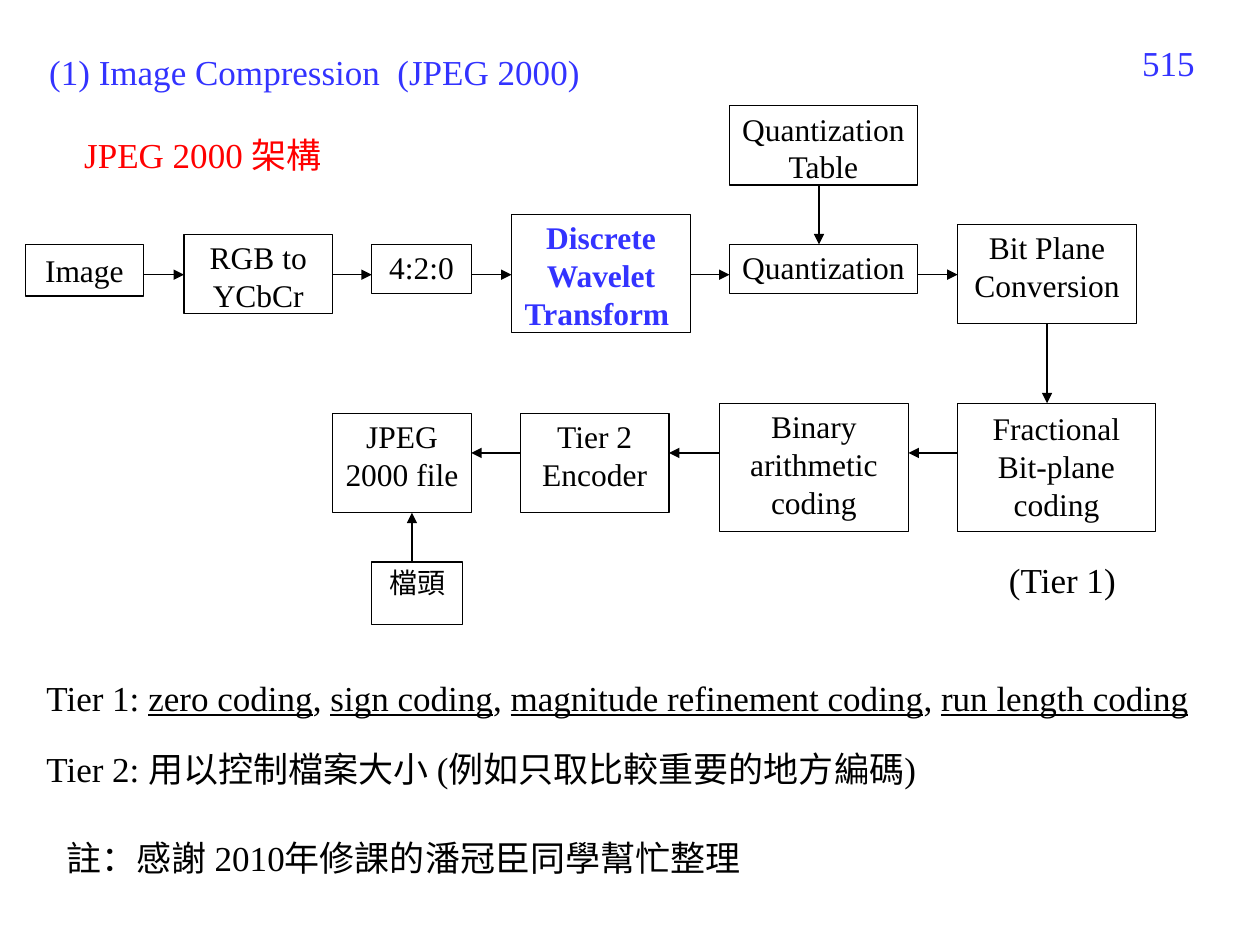
from dataclasses import dataclass

from lxml import etree
from pptx import Presentation
from pptx.dml.color import RGBColor
from pptx.enum.shapes import MSO_CONNECTOR, MSO_SHAPE
from pptx.enum.text import MSO_ANCHOR, MSO_AUTO_SIZE, PP_ALIGN
from pptx.oxml.ns import qn
from pptx.util import Inches, Pt

RECTANGLE = MSO_SHAPE.RECTANGLE
STRAIGHT = MSO_CONNECTOR.STRAIGHT
TOP = MSO_ANCHOR.TOP
NO_AUTOFIT = MSO_AUTO_SIZE.NONE
LEFT, CENTER, RIGHT = PP_ALIGN.LEFT, PP_ALIGN.CENTER, PP_ALIGN.RIGHT

# The slide is a grid of 100 columns and 75 rows
COLUMNS, ROWS = 100, 75
CELL = Inches(0.1)


@dataclass(frozen=True)
class Theme:
    font: str = "Times New Roman"
    ink: RGBColor = RGBColor(0x00, 0x00, 0x00)
    paper: RGBColor = RGBColor(0xFF, 0xFF, 0xFF)
    accent: RGBColor = RGBColor(0x33, 0x33, 0xFF)
    heading: RGBColor = RGBColor(0xFF, 0x00, 0x00)
    body_size: int = 20
    box_size: int = 18
    small_size: int = 16
    line_width: float = 0.75


THEME = Theme()

# Block: text, then left, top, width and height in grid cells
BLOCKS = {
    "image": ("Image", 2, 19.4, 9.4, 4.1),
    "colour": ("RGB to YCbCr", 14.6, 18.6, 11.8, 6.3),
    "sampling": ("4:2:0", 29.5, 19.4, 7.9, 3.9),
    "wavelet": ("Discrete Wavelet Transform ", 40.6, 17, 14.2, 9.4),
    "quantization": ("Quantization", 57.9, 19.4, 14.9, 3.9),
    "bit plane": ("Bit Plane Conversion", 76, 17.8, 14.2, 7.9),
    "fractional": ("Fractional\nBit-plane coding", 76, 32, 15.7, 10.2),
    "binary": ("Binary arithmetic coding", 57.1, 32, 15, 10.2),
    "tier 2": ("Tier 2 Encoder", 41.3, 32.8, 11.8, 7.9),
    "file": ("JPEG 2000 file", 26.4, 32.8, 11, 7.9),
    "table": ("Quantization Table", 57.9, 8.4, 14.9, 6.3),
    "header": ("檔頭", 29.5, 44.6, 7.2, 5),
}
STYLES = {
    "image": {"margins": (0.6, 0.5)},
    "wavelet": {"color": THEME.accent, "bold": True},
    "fractional": {"margins": (1, 0.5)},
    "header": {"size": THEME.small_size},
}

FORWARD = ["image", "colour", "sampling", "wavelet", "quantization", "bit plane"]
BACKWARD = ["fractional", "binary", "tier 2", "file"]
FORWARD_ROW, BACKWARD_ROW = 21.8, 35.95
# Vertical arrow: start block, end block, column
VERTICALS = [
    ("table", "quantization", 65),
    ("bit plane", "fractional", 83.1),
    ("header", "file", 32.7),
]

TIER_1_PARTS = ["zero coding", "sign coding", "magnitude refinement coding",
                "run length coding"]


def cells(*counts):
    return [round(count * CELL) for count in counts]


def format_text(frame, size=THEME.body_size, color=THEME.ink, align=LEFT,
                bold=False, margins=(1, 0.5)):
    frame.word_wrap = True
    frame.auto_size = NO_AUTOFIT
    frame.vertical_anchor = TOP
    frame.margin_left = frame.margin_right = cells(margins[0])[0]
    frame.margin_top = frame.margin_bottom = cells(margins[1])[0]
    for para in frame.paragraphs:
        para.alignment = align
        for span in para.runs:
            span.font.name = THEME.font
            span.font.size = Pt(size)
            span.font.bold = bold
            span.font.color.rgb = color


def add_title(page, text, *place):
    title = page.shapes.title
    title.left, title.top, title.width, title.height = cells(*place)
    title.text_frame.text = text
    format_text(title.text_frame, color=THEME.accent)


def add_text(page, text, *place, **style):
    box = page.shapes.add_textbox(*cells(*place))
    box.text_frame.text = text
    format_text(box.text_frame, **style)


def add_tier_1_line(page, *place):
    """One line in which every coding step is underlined."""
    box = page.shapes.add_textbox(*cells(*place))
    para = box.text_frame.paragraphs[0]
    for index, part in enumerate(TIER_1_PARTS):
        para.add_run().text = ", " if index else "Tier 1: "
        span = para.add_run()
        span.text = part
        span.font.underline = True
    format_text(box.text_frame)


def add_block(page, name):
    text, *place = BLOCKS[name]
    box = page.shapes.add_shape(RECTANGLE, *cells(*place))
    box.shadow.inherit = False
    box.fill.solid()
    box.fill.fore_color.rgb = THEME.paper
    box.line.color.rgb = THEME.ink
    box.line.width = Pt(THEME.line_width)
    box.text_frame.text = text
    style = {"size": THEME.box_size, "align": CENTER, "margins": (0.6, 0.3)}
    format_text(box.text_frame, **(style | STYLES.get(name, {})))


def add_arrow(page, *ends):
    arrow = page.shapes.add_connector(STRAIGHT, *cells(*ends))
    arrow.line.color.rgb = THEME.ink
    arrow.line.width = Pt(THEME.line_width)
    etree.SubElement(arrow.line._get_or_add_ln(), qn("a:tailEnd"), type="triangle")
    etree.SubElement(arrow._element.spPr, qn("a:effectLst"))


def facing_edges(start, end, axis):
    """Edges of two blocks that face each other; axis 0 is across, 1 is down."""
    first, second = BLOCKS[start][1:], BLOCKS[end][1:]
    if first[axis] < second[axis]:
        return first[axis] + first[axis + 2], second[axis]
    return first[axis], second[axis] + second[axis + 2]


def add_flow(page):
    for chain, row in ((FORWARD, FORWARD_ROW), (BACKWARD, BACKWARD_ROW)):
        for start, end in zip(chain, chain[1:]):
            left, right = facing_edges(start, end, 0)
            add_arrow(page, left, row, right, row)
    for start, end, column in VERTICALS:
        top, bottom = facing_edges(start, end, 1)
        add_arrow(page, column, top, column, bottom)


def main():
    deck = Presentation()
    deck.slide_width, deck.slide_height = cells(COLUMNS, ROWS)
    page = deck.slides.add_slide(deck.slide_layouts[5])

    # Headings and page number
    add_title(page, "(1) Image Compression  (JPEG 2000)", 2.9, 3.5, 64.6, 4.3)
    add_text(page, "515", 87, 2.8, 8.8, 5.2, color=THEME.accent, align=RIGHT)
    add_text(page, "JPEG 2000 架構", 5.7, 10.1, 26, 4.3, color=THEME.heading)

    # Coding pipeline
    for name in BLOCKS:
        add_block(page, name)
    add_flow(page)
    add_text(page, "(Tier 1)", 79.1, 43.8, 11, 4.4)

    # Explanations
    add_tier_1_line(page, 2.7, 53.2, 93.7, 4.4)
    add_text(page, "Tier 2: 用以控制檔案大小 (例如只取比較重要的地方編碼)",
             2.7, 58.8, 93.7, 4.4)
    add_text(page, "註：感謝 2010年修課的潘冠臣同學幫忙整理", 4.3, 65.9, 57.5, 4.3)

    deck.save("out.pptx")


if __name__ == "__main__":
    main()
